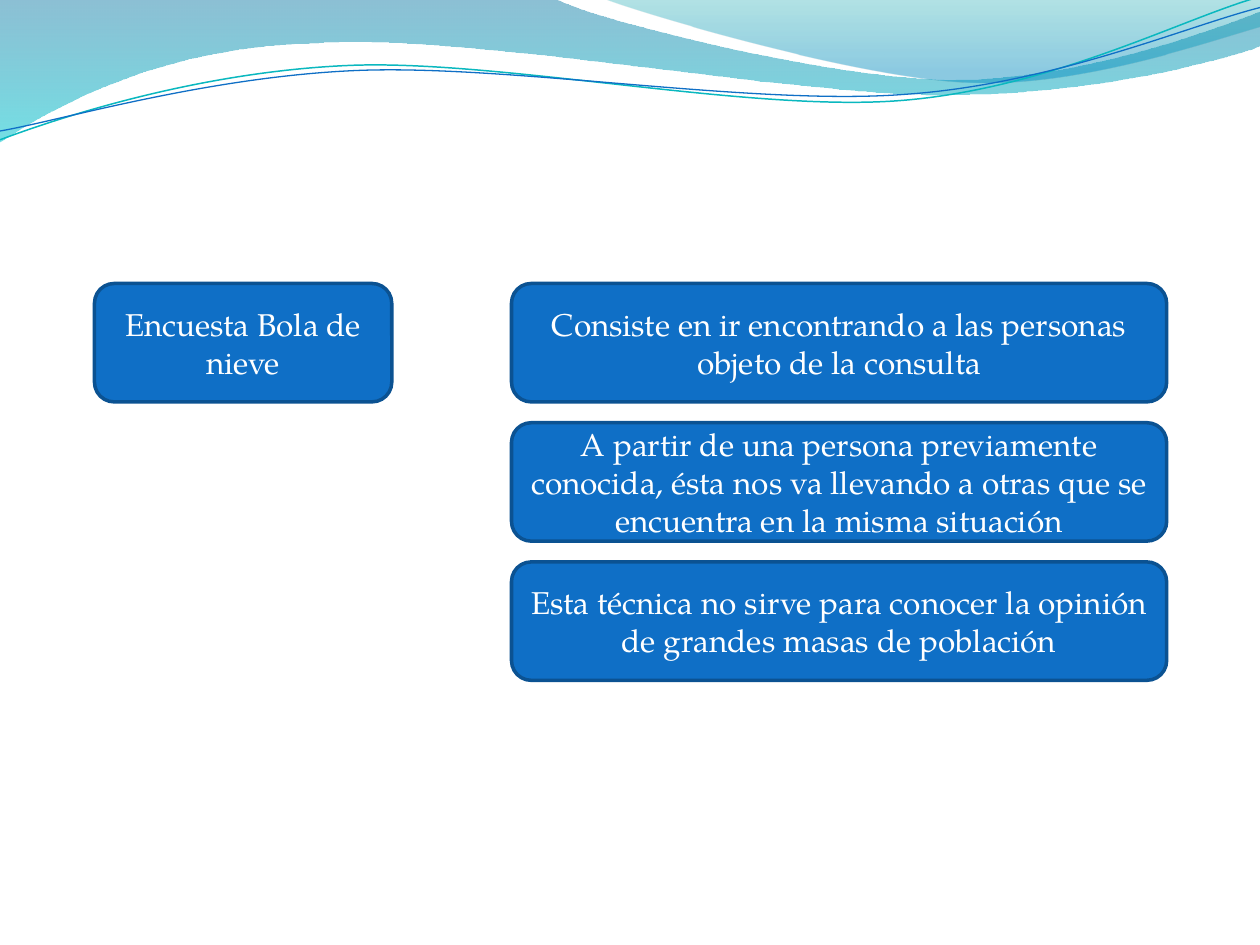
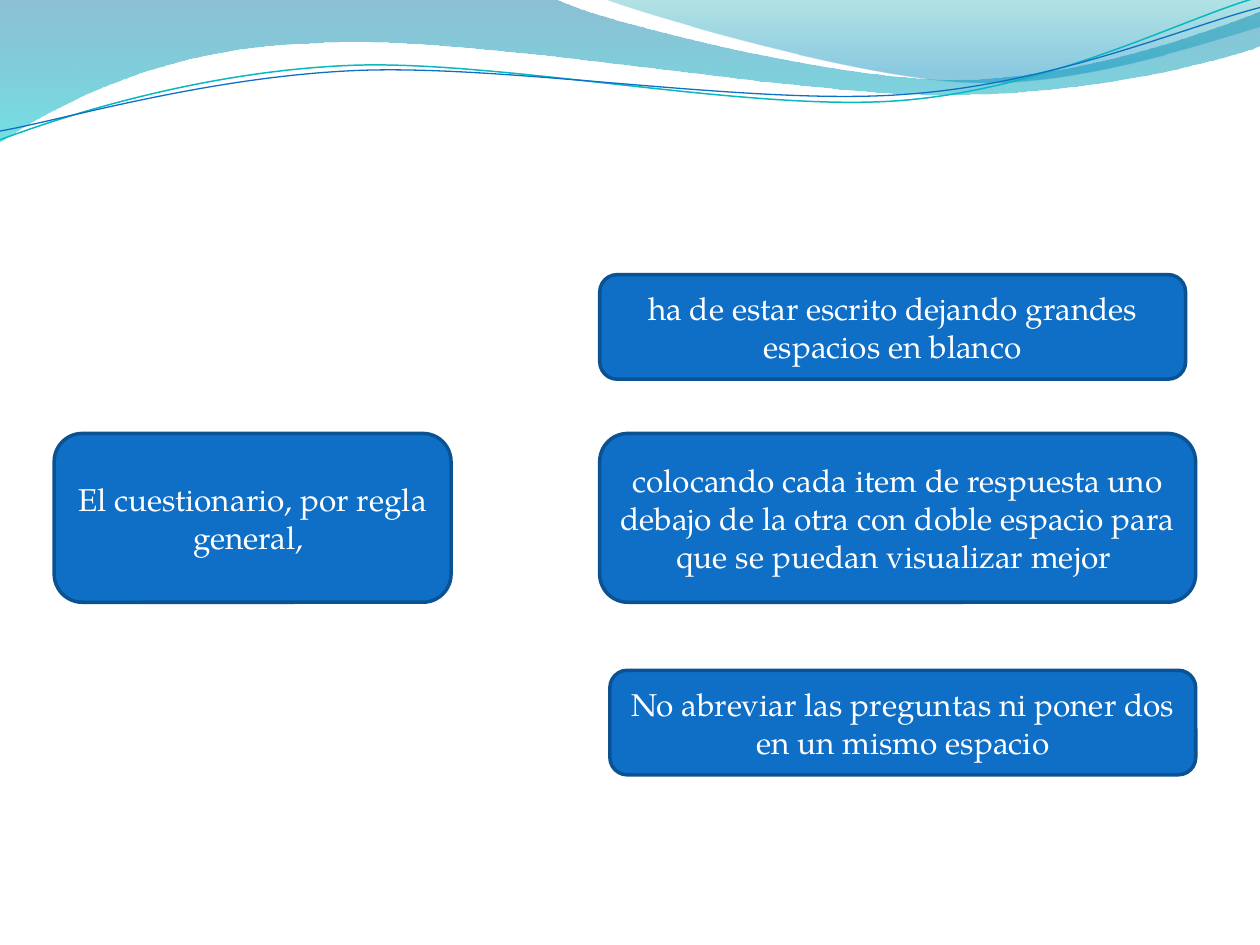
from lxml.etree import SubElement
from pptx import Presentation
from pptx.dml.color import RGBColor
from pptx.enum.shapes import MSO_SHAPE
from pptx.enum.text import MSO_ANCHOR, PP_ALIGN
from pptx.oxml.ns import qn
from pptx.util import Inches, Pt

COLORS = {
    "card": "0F6FC6",
    "card_edge": "0B5292",
    "text": "FFFFFF",
    "deep_blue": "0074A1",
    "aqua": "00C6CF",
    "teal": "00A1A9",
    "sky": "008BBF",
    "teal_line": "0AB8BF",
}
FONT_FORMAT = {"name": "TeX Gyre Pagella", "size": Pt(18)}
FRAME_FORMAT = {"word_wrap": True, "vertical_anchor": MSO_ANCHOR.MIDDLE}

# Bands: start, closed outline of cubic (6 numbers) or straight (2 numbers)
# segments, then gradient stops as (position, colour, opacity in percent).
BANDS = [
    ((0, 0),
     [(4.4, -0.01),
      (4.76, 0.17, 6.64, 0.63, 7.58, 0.63),
      (8.53, 0.63, 9.58, 0.26, 10, 0.09),
      (10.01, 0.36),
      (9.83, 0.44, 8.7, 0.76, 7.46, 0.75),
      (6.22, 0.75, 3.82, 0.28, 2.57, 0.34),
      (1.29, 0.36, 0.46, 0.83, -0.01, 1.13)],
     [(0, "deep_blue", 45), (1, "aqua", 55)]),
    ((4.79, -0.01),
     [(5.09, 0.11, 6.82, 0.62, 7.69, 0.65),
      (8.56, 0.69, 9.61, 0.32, 10, 0.21),
      (10, 0)],
     [(0, "teal", 30), (0.8, "sky", 45)]),
]
# Wave lines: start, cubic segments, colour, width.
WAVES = [
    ((0, 1.11),
     [(0.48, 0.93, 1.58, 0.57, 2.77, 0.52),
      (3.95, 0.47, 5.93, 0.89, 7.13, 0.8),
      (8.33, 0.71, 9.38, 0.15, 9.98, -0.02)],
     "teal_line", 0.85),
    ((0, 1.04),
     [(0.47, 0.96, 1.64, 0.61, 2.83, 0.56),
      (4.03, 0.51, 5.97, 0.84, 7.17, 0.75),
      (8.36, 0.67, 9.41, 0.21, 10, 0.06)],
     "card", 0.75),
]


def rgb(color):
    return RGBColor.from_string(COLORS[color])


def set_attributes(target, values):
    for attribute, value in values.items():
        setattr(target, attribute, value)


def set_line(shape, color, width):
    shape.line.color.rgb = rgb(color)
    shape.line.width = Pt(width)


def bend_segments(outline, segments):
    """Turn the three straight steps of each cubic segment into one curve."""
    steps = iter(list(outline.element.iter(qn("a:lnTo"))))
    for segment in segments:
        first = next(steps)
        if len(segment) == 6:
            first.tag = qn("a:cubicBezTo")
            for _ in range(2):
                step = next(steps)
                first.append(step[0])
                step.getparent().remove(step)


def draw_outline(slide, start, segments, close):
    builder = slide.shapes.build_freeform(Inches(start[0]), Inches(start[1]))
    builder.add_line_segments(
        [(Inches(x), Inches(y)) for segment in segments
         for x, y in zip(segment[::2], segment[1::2])],
        close=close)
    outline = builder.convert_to_shape()
    bend_segments(outline, segments)
    outline.shadow.inherit = False
    return outline


def fill_gradient(shape, stops):
    shape.fill.gradient()
    shape.fill.gradient_angle = 270
    for stop, (position, color, _) in zip(shape.fill.gradient_stops, stops):
        stop.position = position
        stop.color.rgb = rgb(color)
    tints = shape.element.spPr.iter(qn("a:srgbClr"))
    for tint, (_, _, opacity) in zip(tints, stops):
        SubElement(tint, qn("a:alpha")).set("val", str(opacity * 1000))


def add_wave_header(prs, slide):
    """Draw the header on a slide and move it to the master, behind all."""
    header = []
    for start, segments, stops in BANDS:
        band = draw_outline(slide, start, segments, close=True)
        fill_gradient(band, stops)
        band.line.fill.background()
        header.append(band)
    for start, segments, color, width in WAVES:
        wave = draw_outline(slide, start, segments, close=False)
        wave.fill.background()
        set_line(wave, color, width)
        header.append(wave)
    master_tree = prs.slide_master.shapes.element
    for index, part in enumerate(header, start=2):
        master_tree.insert(index, part.element)


def add_card(slide, text, box):
    card = slide.shapes.add_shape(
        MSO_SHAPE.ROUNDED_RECTANGLE, *(Inches(length) for length in box))
    card.shadow.inherit = False
    card.fill.solid()
    card.fill.fore_color.rgb = rgb("card")
    set_line(card, "card_edge", 2)
    set_attributes(card.text_frame, FRAME_FORMAT)
    paragraph = card.text_frame.paragraphs[0]
    paragraph.alignment = PP_ALIGN.CENTER
    run = paragraph.add_run()
    run.text = text
    set_attributes(run.font, FONT_FORMAT)
    run.font.color.rgb = rgb("text")


def add_snowball_survey(slide, box):
    """Place the topic at the left and an even stack of traits at the right."""
    left, top, width, height = box
    traits = [
        "Consiste en ir encontrando a las personas objeto de la consulta",
        "A partir de una persona previamente conocida, ésta nos va llevando "
        "a otras que se encuentra en la misma situación",
        "Esta técnica no sirve para conocer la opinión de grandes masas de "
        "población",
    ]
    card_height, trait_width = 0.94, 5.2
    pitch = (height - card_height) / (len(traits) - 1)
    add_card(slide, "Encuesta Bola de nieve", (left, top, 2.36, card_height))
    for row, trait in enumerate(traits):
        add_card(slide, trait, (left + width - trait_width, top + row * pitch,
                                trait_width, card_height))


def add_questionnaire_rules(slide, box):
    """Place the topic beside the middle rule, with a lower rule at each end."""
    left, top, width, height = box
    right, bottom = left + width, top + height
    rule_width, rule_height = 4.65, 0.83
    main_width, main_height = 4.73, 1.34
    rules_left, middle = right - main_width, top + 1.26
    add_card(slide, "El cuestionario, por regla general, ",
             (left, middle, 3.15, main_height))
    add_card(slide, "ha de estar escrito dejando grandes espacios en blanco",
             (rules_left, top, rule_width, rule_height))
    add_card(slide, "colocando cada item de respuesta uno debajo de la otra "
             "con doble espacio para que se puedan visualizar mejor ",
             (rules_left, middle, main_width, main_height))
    add_card(slide, "No abreviar las preguntas ni poner dos en un mismo espacio",
             (right - rule_width, bottom - rule_height,
              rule_width, rule_height))


def main():
    prs = Presentation()
    set_attributes(prs, {"slide_width": Inches(10), "slide_height": Inches(7.5)})
    blank = prs.slide_layouts[6]
    snowball = prs.slides.add_slide(blank)
    questionnaire = prs.slides.add_slide(blank)
    add_wave_header(prs, snowball)
    add_snowball_survey(snowball, (0.75, 2.25, 8.51, 3.15))
    add_questionnaire_rules(questionnaire, (0.43, 2.18, 9.06, 3.97))
    prs.save("out.pptx")


if __name__ == "__main__":
    main()
